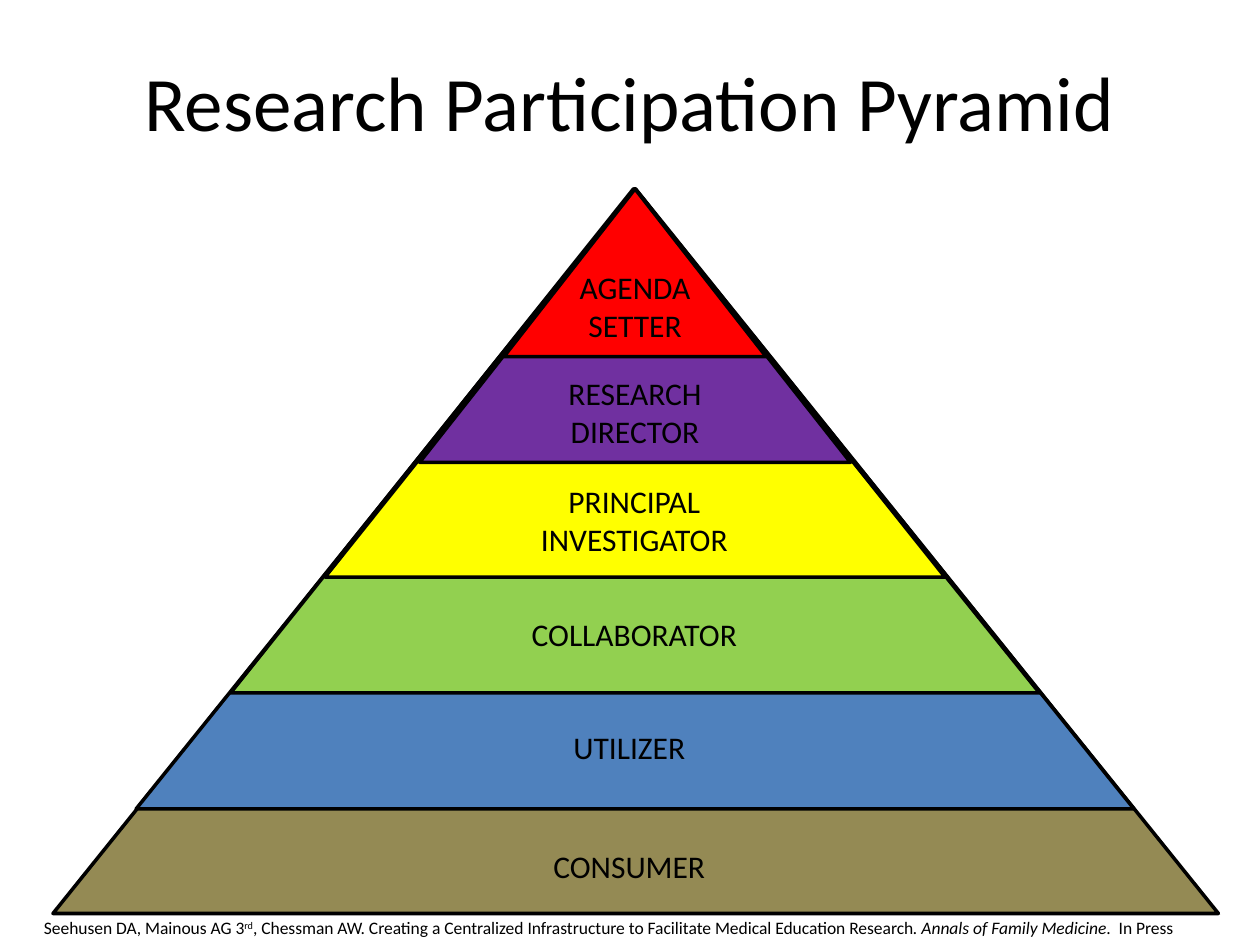
"""Build the Research Participation Pyramid slide."""
from dataclasses import dataclass

from pptx import Presentation, util as u
from pptx.dml.color import RGBColor
from pptx.enum import shapes, text


@dataclass(frozen=True)
class Theme:
    font: str = "Calibri"
    ink: str = "000000"
    consumer: str = "948A54"
    utilizer: str = "4F81BD"
    collaborator: str = "92D050"
    investigator: str = "FFFF00"
    director: str = "7030A0"
    setter: str = "FF0000"
    title_size: int = 44
    label_size: int = 18
    citation_size: int = 10


theme = Theme()
ink = RGBColor.from_string(theme.ink)
presentation = Presentation()
presentation.slide_width = u.Inches(10)
presentation.slide_height = u.Inches(7.5)
slide = presentation.slides.add_slide(presentation.slide_layouts[6])


def add_text(box, size, alignment, anchor=text.MSO_ANCHOR.TOP):
    shape = slide.shapes.add_textbox(*(u.Inches(value) for value in box))
    frame = shape.text_frame
    frame.word_wrap = True
    frame.vertical_anchor = anchor
    paragraph = frame.paragraphs[0]
    paragraph.alignment = alignment
    paragraph.font.size = u.Pt(size)
    return paragraph


def add_run(paragraph, words, italic=False, superscript=False):
    run = paragraph.add_run()
    run.text = words
    run.font.name = theme.font
    run.font.size = paragraph.font.size
    run.font.color.rgb = ink
    run.font.italic = italic
    if superscript:
        run.font._element.set("baseline", "30000")


title = add_text((0.5, 0.17, 9, 1.25), theme.title_size,
                 text.PP_ALIGN.CENTER, text.MSO_ANCHOR.MIDDLE)
add_run(title, "Research Participation Pyramid")

apex_top = 1.5
levels = [
    (0.42, 9.25, 5.75, theme.consumer, "CONSUMER", (4.08, 6.67, 1.83, 0.4)),
    (1.08, 7.92, 4.92, theme.utilizer, "UTILIZER", (4.08, 5.73, 1.83, 0.4)),
    (1.83, 6.42, 4, theme.collaborator, "COLLABORATOR", (4.12, 4.83, 1.83, 0.4)),
    (2.58, 4.92, 3.08, theme.investigator, "PRINCIPAL INVESTIGATOR", (4.12, 3.78, 1.83, 0.71)),
    (3.33, 3.42, 2.17, theme.director, "RESEARCH DIRECTOR", (4.33, 2.92, 1.42, 0.71)),
    (4, 2.08, 1.33, theme.setter, "AGENDA SETTER", (4.5, 2.08, 1.08, 0.71)),
]
for left, width, height, color, role, label_box in levels:
    triangle = slide.shapes.add_shape(
        shapes.MSO_SHAPE.ISOSCELES_TRIANGLE,
        u.Inches(left), u.Inches(apex_top), u.Inches(width), u.Inches(height))
    triangle.shadow.inherit = False
    triangle.fill.solid()
    triangle.fill.fore_color.rgb = RGBColor.from_string(color)
    triangle.line.color.rgb = ink
    triangle.line.width = u.Pt(2)
    if role == "COLLABORATOR":
        triangle.adjustments[0] = 0.498

for *_, role, label_box in reversed(levels):
    label = add_text(label_box, theme.label_size, text.PP_ALIGN.CENTER)
    add_run(label, role)

citation = add_text((0.25, 7.23, 9.75, 0.27), theme.citation_size, text.PP_ALIGN.LEFT)
add_run(citation, "Seehusen DA, Mainous AG 3")
add_run(citation, "rd", superscript=True)
add_run(citation, ", Chessman AW. Creating a Centralized Infrastructure to "
                  "Facilitate Medical Education Research")
add_run(citation, ". Annals of Family Medicine", italic=True)
add_run(citation, ".  In Press")

presentation.save("out.pptx")
